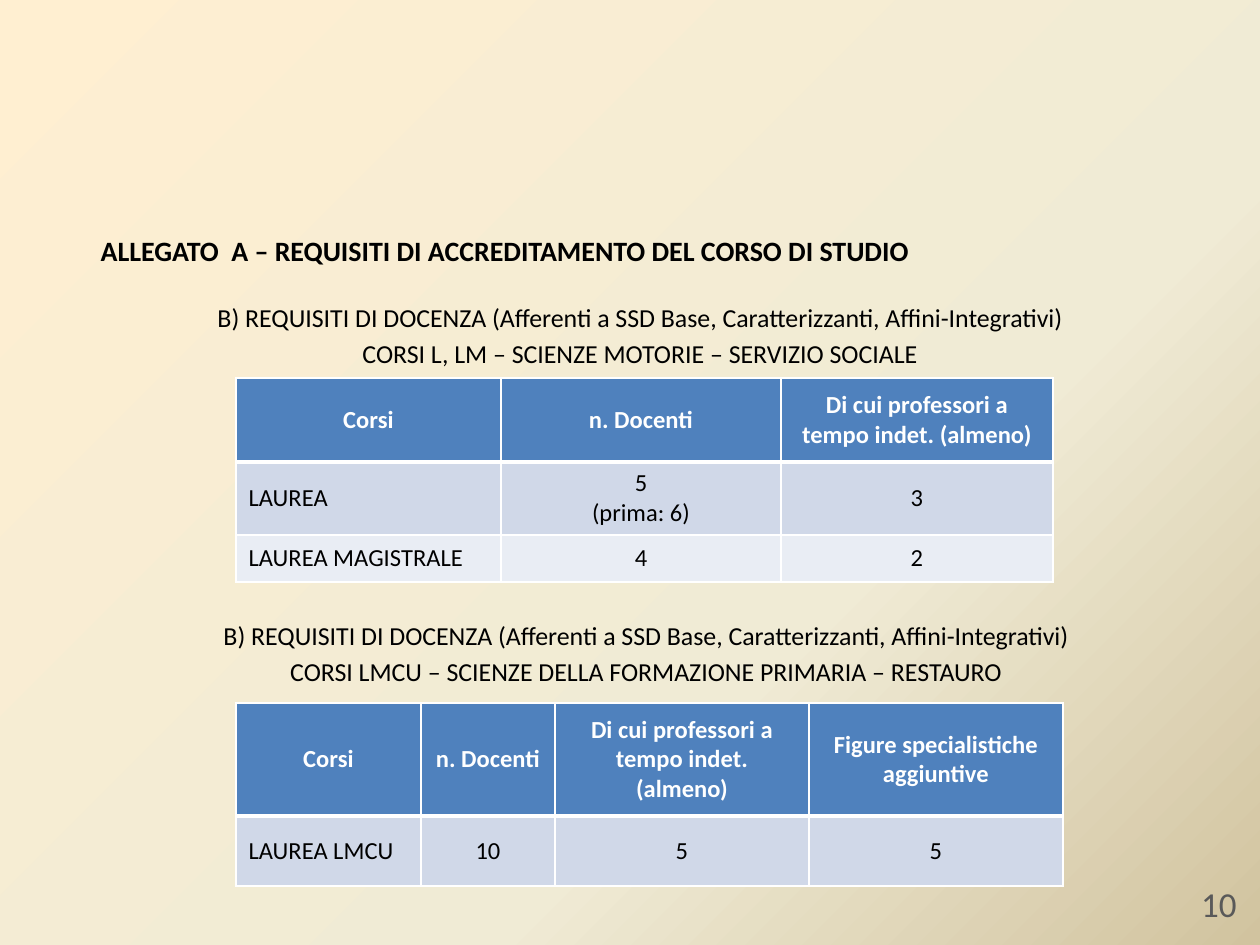
from dataclasses import dataclass

from lxml.etree import SubElement
from pptx import Presentation
from pptx.dml.color import RGBColor
from pptx.enum.text import MSO_ANCHOR as ANCHOR, MSO_AUTO_SIZE as AUTOSIZE, PP_ALIGN as ALIGN
from pptx.oxml.ns import qn
from pptx.util import Emu, Pt


@dataclass(frozen=True)
class Theme:
    font: str = "Calibri"
    ink: str = "000000"
    white: str = "FFFFFF"
    gray: str = "595959"
    header: str = "4F81BD"
    bands: tuple = ("D0D8E8", "E9EDF4")
    background: tuple = ((0, "FFEFD1"), (65, "F0EBD5"), (100, "D1C39F"))
    title_size: float = 16
    caption_size: float = 14.8
    table_size: float = 14
    number_size: float = 20
    thin: float = 1
    thick: float = 3


THEME = Theme()
EMU_PER_PX = 914400 / 126


def px(n):
    return Emu(round(n * EMU_PER_PX))


def write(tf, text, size, color=THEME.ink, bold=False, align=ALIGN.LEFT, gap=0):
    """Fill a text frame, one paragraph per line of text."""
    tf.word_wrap = True
    for i, line in enumerate(text.split("\n")):
        p = tf.paragraphs[0] if i == 0 else tf.add_paragraph()
        p.alignment = align
        p.space_before = Pt(gap if i else 0)
        r = p.add_run()
        r.text = line
        r.font.name = THEME.font
        r.font.size = Pt(size)
        r.font.bold = bold
        r.font.color.rgb = RGBColor.from_string(color)


def paint_background(slide):
    fill = slide.background.fill
    fill.gradient()
    grad = slide.background._cSld.find(".//" + qn("a:gradFill"))
    stops = grad.find(qn("a:gsLst"))
    for stop in list(stops):
        stops.remove(stop)
    for percent, color in THEME.background:
        stop = SubElement(stops, qn("a:gs"), pos=str(percent * 1000))
        SubElement(stop, qn("a:srgbClr"), val=color)
    lin = grad.find(qn("a:lin"))
    lin.set("ang", str(45 * 60000))
    lin.set("scaled", "0")


def add_title(slide, box, text):
    sp = slide.shapes.title
    sp.left, sp.top, sp.width, sp.height = map(px, box)
    tf = sp.text_frame
    tf.auto_size = AUTOSIZE.NONE
    tf.vertical_anchor = ANCHOR.MIDDLE
    write(tf, text, THEME.title_size, bold=True)


def add_text(slide, box, text, size, **style):
    sp = slide.shapes.add_textbox(*map(px, box))
    write(sp.text_frame, text, size, align=ALIGN.CENTER, **style)


def set_borders(cell, top, bottom):
    tc_pr = cell._tc.get_or_add_tcPr()
    widths = {"L": THEME.thin, "R": THEME.thin, "T": top, "B": bottom}
    for side, width in widths.items():
        ln = SubElement(tc_pr, qn("a:ln" + side), w=str(Pt(width)))
        fill = SubElement(ln, qn("a:solidFill"))
        SubElement(fill, qn("a:srgbClr"), val=THEME.white)


def add_requirements(slide, left, top, widths, heights, rows):
    """Draw a table with a header row, banded body rows and left-aligned labels."""
    frame = slide.shapes.add_table(len(rows), len(widths), px(left), px(top),
                                   px(sum(widths)), px(sum(heights)))
    table = frame.table
    for column, width in zip(table.columns, widths):
        column.width = px(width)
    for i, (height, values) in enumerate(zip(heights, rows)):
        table.rows[i].height = px(height)
        is_header = i == 0
        fill = THEME.header if is_header else THEME.bands[(i - 1) % 2]
        for j, value in enumerate(values):
            cell = table.cell(i, j)
            set_borders(cell, top=THEME.thick if i == 1 else THEME.thin,
                        bottom=THEME.thick if is_header else THEME.thin)
            cell.fill.solid()
            cell.fill.fore_color.rgb = RGBColor.from_string(fill)
            cell.vertical_anchor = ANCHOR.MIDDLE
            write(cell.text_frame, value, THEME.table_size, bold=is_header,
                  color=THEME.white if is_header else THEME.ink,
                  align=ALIGN.CENTER if is_header or j else ALIGN.LEFT)


def main():
    prs = Presentation()
    prs.slide_width, prs.slide_height = px(1260), px(945)
    slide = prs.slides.add_slide(prs.slide_layouts[5])
    paint_background(slide)
    add_title(slide, (88, 226, 1101, 49),
              "ALLEGATO  A – REQUISITI DI ACCREDITAMENTO DEL CORSO DI STUDIO")

    heading = "B) REQUISITI DI DOCENZA (Afferenti a SSD Base, Caratterizzanti, Affini-Integrativi)\n"
    columns = ["Corsi", "n. Docenti", "Di cui professori a tempo indet. (almeno)"]
    table_left = 236

    add_text(slide, (134, 295, 1012, 78),
             heading + "CORSI L, LM – SCIENZE MOTORIE – SERVIZIO SOCIALE",
             THEME.caption_size, gap=3)
    add_requirements(slide, table_left, 378, (265, 280, 272), (84, 73, 47), [
        columns,
        ["LAUREA", "5\n(prima: 6)", "3"],
        ["LAUREA MAGISTRALE", "4", "2"],
    ])

    add_text(slide, (140, 613, 1012, 76),
             heading + "CORSI LMCU – SCIENZE DELLA FORMAZIONE PRIMARIA – RESTAURO",
             THEME.caption_size, gap=3)
    add_requirements(slide, table_left, 703, (185, 134, 254, 254), (113, 70), [
        columns + ["Figure specialistiche aggiuntive"],
        ["LAUREA LMCU", "10", "5", "5"],
    ])

    add_text(slide, (1182, 876, 74, 50), "10", THEME.number_size, color=THEME.gray)
    prs.save("out.pptx")


if __name__ == "__main__":
    main()
